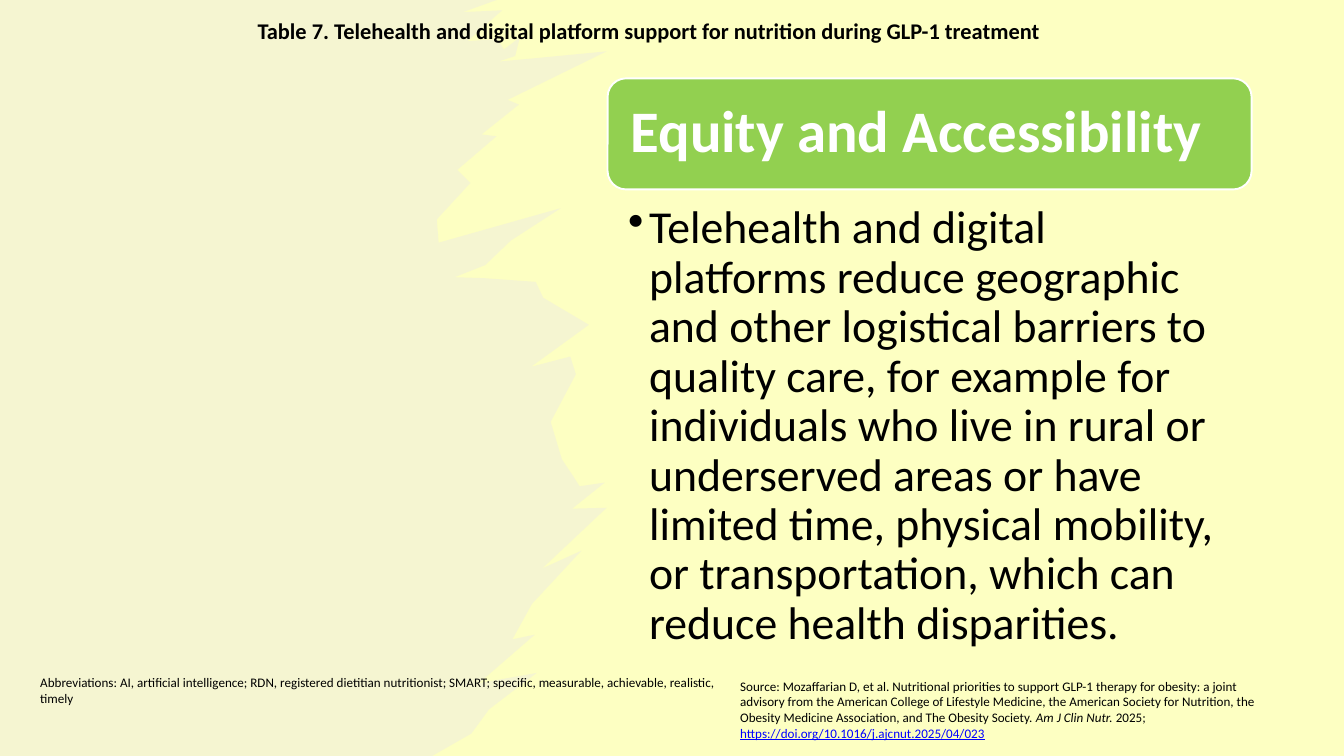
from lxml.etree import SubElement
from pptx import Presentation
from pptx.dml.color import RGBColor
from pptx.enum.shapes import MSO_SHAPE as SHAPE
from pptx.enum.text import MSO_ANCHOR as ANCHOR, MSO_AUTO_SIZE as AUTO, PP_ALIGN as ALIGN
from pptx.oxml.ns import qn
from pptx.util import Pt

CREAM = RGBColor(0xFD, 0xFF, 0xC2)
SAND = RGBColor(0xEE, 0xEC, 0xE1)
GREEN = RGBColor(0x92, 0xD0, 0x50)
WHITE = RGBColor(0xFF, 0xFF, 0xFF)
BLACK = RGBColor(0, 0, 0)
BLUE = RGBColor(0, 0, 0xFF)

FONT = "Calibri"
WIDTH, HEIGHT = 1440, 810

TITLE = [("Table 7. Telehealth and digital platform support for nutrition during GLP-1 treatment", {"bold": True})]
HEADING = [("Equity and Accessibility", {"bold": True})]
BODY = [("Telehealth and digital platforms reduce geographic and other logistical barriers to quality care, "
         "for example for individuals who live in rural or underserved areas or have limited time, "
         "physical mobility, or transportation, which can reduce health disparities.", {})]
SOURCE = [
    ("Source: Mozaffarian D, et al. Nutritional priorities to support GLP-1 therapy for obesity: "
     "a joint advisory from the American College of Lifestyle Medicine, the American Society for Nutrition, "
     "the Obesity Medicine Association, and The Obesity Society. ", {}),
    ("Am J Clin Nutr. ", {"italic": True}),
    ("2025; ", {}),
    ("https://doi.org/10.1016/j.ajcnut.2025/04/023", {"underline": True, "color": BLUE}),
]
ABBREVIATIONS = [("Abbreviations: AI, artificial intelligence; RDN, registered dietitian nutritionist; "
                  "SMART; specific, measurable, achievable, realistic, timely", {})]

NOTES = [
    ((38, 15, 1314, 36), TITLE, 24, ALIGN.CENTER),
    ((786, 723, 598, 75), SOURCE, 14, ALIGN.LEFT),
    ((36, 719, 738, 41), ABBREVIATIONS, 14, ALIGN.LEFT),
]
HEADING_BOX = (651, 84, 690, 119)
BODY_BOX = (651, 213, 690, 503)

BRUSH_EDGE = [
    (532, 0), (496, 13), (538, 11), (501, 44), (533, 42), (540, 53), (557, 40), (552, 60), (534, 66),
    (577, 62), (650, 55), (544, 107), (556, 112), (516, 144), (532, 146), (490, 182), (504, 196),
    (468, 235), (470, 260), (601, 223), (547, 258), (520, 284), (487, 297), (518, 298), (574, 302),
    (582, 319), (631, 348), (569, 393), (611, 382), (617, 401), (590, 452), (602, 492), (614, 510),
    (621, 521), (648, 517), (613, 545), (650, 544), (581, 609), (623, 590), (570, 647), (549, 685),
    (573, 680), (513, 732), (575, 721), (524, 760), (505, 786), (463, 810),
]


def add_brush(s):
    edge = [(Pt(x), Pt(y)) for x, y in BRUSH_EDGE]
    builder = s.shapes.build_freeform(0, 0, scale=1.0)
    builder.add_line_segments(edge + [(0, Pt(HEIGHT))], close=True)
    sp = builder.convert_to_shape()
    sp.shadow.inherit = False
    sp.fill.solid()
    sp.fill.fore_color.rgb = SAND
    color = sp.element.spPr.find(qn("a:solidFill"))[0]
    SubElement(color, qn("a:alpha"), val="50000")
    sp.line.fill.background()


def write_text(sp, runs, size, color=BLACK, paragraph=None, frame=None):
    tf = sp.text_frame
    for name, value in {"word_wrap": True, **(frame or {})}.items():
        setattr(tf, name, value)
    p = tf.paragraphs[0]
    for name, value in {"alignment": ALIGN.LEFT, **(paragraph or {})}.items():
        setattr(p, name, value)
    for text, style in runs:
        r = p.add_run()
        r.text = text
        style = {"name": FONT, "size": Pt(size), "color": color, **style}
        r.font.color.rgb = style.pop("color")
        for name, value in style.items():
            setattr(r.font, name, value)
    return p


def insets(left, top, right, bottom):
    return {"margin_left": Pt(left), "margin_top": Pt(top), "margin_right": Pt(right), "margin_bottom": Pt(bottom)}


def main():
    prs = Presentation()
    prs.slide_width, prs.slide_height = Pt(WIDTH), Pt(HEIGHT)
    s = prs.slides.add_slide(prs.slide_layouts[6])
    s.background.fill.solid()
    s.background.fill.fore_color.rgb = CREAM
    add_brush(s)

    for box, runs, size, align in NOTES:
        sp = s.shapes.add_textbox(*map(Pt, box))
        write_text(sp, runs, size, paragraph={"alignment": align, "space_after": Pt(6)},
                   frame={"auto_size": AUTO.SHAPE_TO_FIT_TEXT})

    sp = s.shapes.add_shape(SHAPE.ROUNDED_RECTANGLE, *map(Pt, HEADING_BOX))
    sp.shadow.inherit = False
    sp.fill.solid()
    sp.fill.fore_color.rgb = GREEN
    sp.line.color.rgb = WHITE
    sp.line.width = Pt(2)
    write_text(sp, HEADING, 63, WHITE, {"line_spacing": 0.9},
               {"vertical_anchor": ANCHOR.MIDDLE, **insets(19, 19, 19, 19)})

    sp = s.shapes.add_textbox(*map(Pt, BODY_BOX))
    p = write_text(sp, BODY, 49, paragraph={"line_spacing": 0.9, "level": 1}, frame=insets(22, 6, 35, 6))
    pPr = p._p.get_or_add_pPr()
    pPr.set("marL", str(Pt(22.5)))
    pPr.set("indent", str(Pt(-22.5)))
    SubElement(pPr, qn("a:buChar"), char="•")

    prs.save("out.pptx")


if __name__ == "__main__":
    main()
